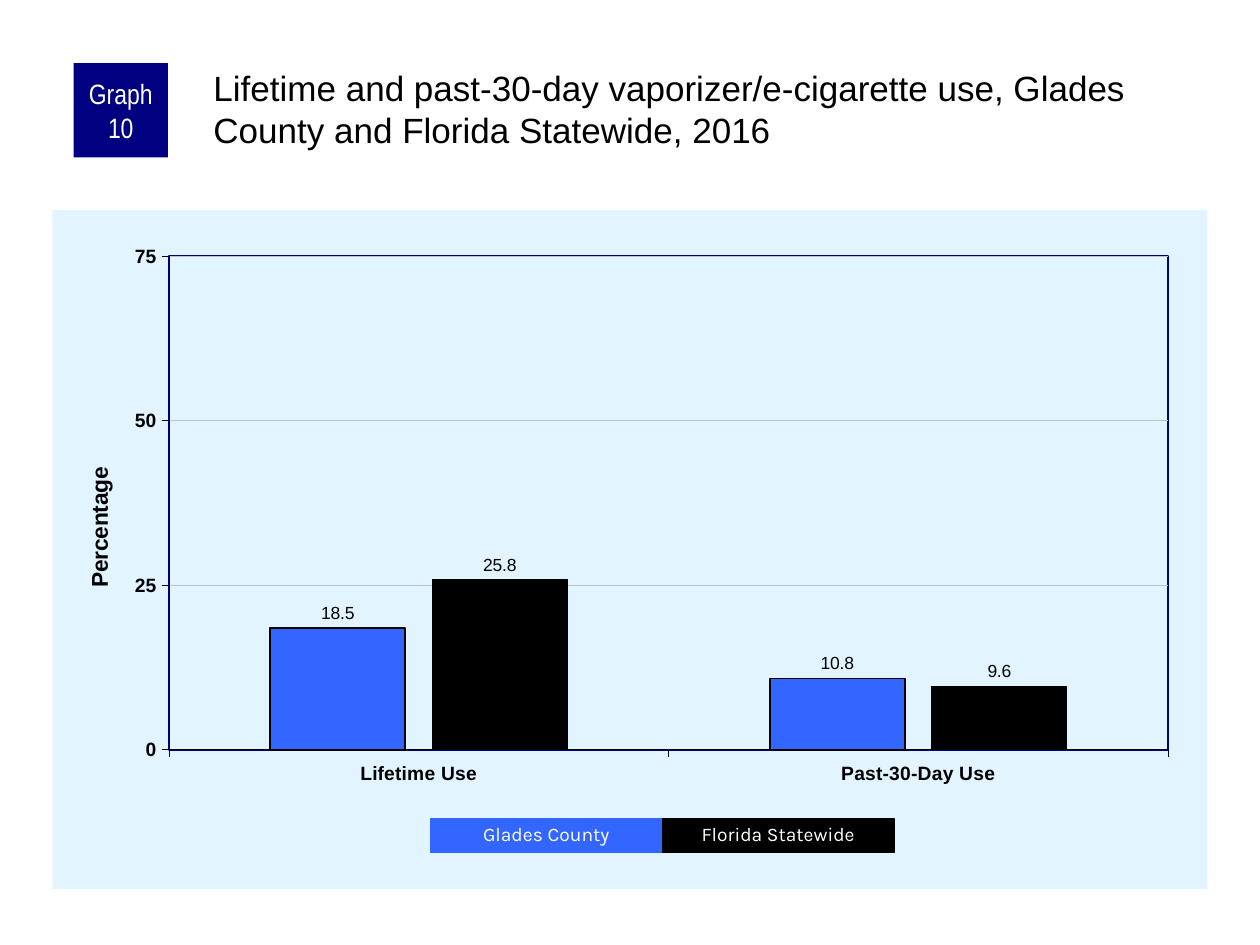
from lxml.etree import fromstring
from pptx import Presentation
from pptx.chart.data import CategoryChartData
from pptx.dml.color import RGBColor
from pptx.enum.chart import XL_CHART_TYPE, XL_LABEL_POSITION, XL_TICK_MARK
from pptx.enum.shapes import MSO_SHAPE
from pptx.enum.text import MSO_ANCHOR, MSO_AUTO_SIZE, PP_ALIGN
from pptx.oxml.ns import nsdecls
from pptx.util import Pt

COLORS = {"navy": "000080", "blue": "3366FF", "black": "000000",
          "white": "FFFFFF", "pale": "E1F4FF", "grid": "C0C0C0"}


def rgb(name):
    return RGBColor.from_string(COLORS[name])


def set_font(font, size, color="black", name="Arial", bold=False):
    font.size, font.name, font.bold = Pt(size), name, bold
    font.color.rgb = rgb(color)


def set_line(line, color, width):
    line.color.rgb = rgb(color)
    line.width = Pt(width)


def write(tf, text, align=PP_ALIGN.LEFT, anchor=MSO_ANCHOR.TOP,
          insets=(7.2, 3.6, 7.2, 3.6), spacing=None, **font):
    tf.word_wrap = True
    tf.vertical_anchor = anchor
    tf.margin_left, tf.margin_top, tf.margin_right, tf.margin_bottom = map(Pt, insets)
    p = tf.paragraphs[0]
    p.alignment, p.line_spacing = align, spacing
    r = p.add_run()
    r.text = text
    set_font(r.font, **font)


def chart_xml(xml):
    """Parse a chart fragment, declaring its namespaces on the root tag."""
    tag, rest = xml.split(">", 1)
    return fromstring(f"{tag} {nsdecls('c', 'a')}>{rest}")


def manual_layout(x, y, w=None, h=None):
    target = '<c:layoutTarget val="inner"/>' if w else ""
    size = f'<c:w val="{w}"/><c:h val="{h}"/>' if w else ""
    return chart_xml(
        f'<c:layout><c:manualLayout>{target}<c:xMode val="edge"/><c:yMode val="edge"/>'
        f'<c:x val="{x}"/><c:y val="{y}"/>{size}</c:manualLayout></c:layout>')


class Deck:
    def __init__(self, width, height):
        self.prs = Presentation()
        self.prs.slide_width, self.prs.slide_height = Pt(width), Pt(height)
        self.s = self.prs.slides.add_slide(self.prs.slide_layouts[6])

    def text(self, box, text, **fmt):
        write(self.s.shapes.add_textbox(*map(Pt, box)).text_frame, text, **fmt)

    def box(self, box, fill, text, line=None, grow=False, **fmt):
        sp = self.s.shapes.add_shape(MSO_SHAPE.RECTANGLE, *map(Pt, box))
        sp.shadow.inherit = False
        sp.fill.solid()
        sp.fill.fore_color.rgb = rgb(fill)
        if line:
            set_line(sp.line, line, 0.75)
        else:
            sp.line.fill.background()
        write(sp.text_frame, text, align=PP_ALIGN.CENTER, color="white", **fmt)
        if grow:
            sp.text_frame.auto_size = MSO_AUTO_SIZE.SHAPE_TO_FIT_TEXT

    def columns(self, box, categories, series):
        """Add a column chart; series holds (name, values, fill, line width)."""
        data = CategoryChartData(number_format="0.0")
        data.categories = categories
        for name, values, *_ in series:
            data.add_series(name, values)
        chart = self.s.shapes.add_chart(
            XL_CHART_TYPE.COLUMN_CLUSTERED, *map(Pt, box), data).chart
        chart.has_legend = chart.has_title = False
        set_font(chart.font, 11.5)
        plot = chart.plots[0]
        plot.gap_width, plot.overlap, plot.vary_by_categories = 150, -20, False
        for ser, (_, _, fill, width) in zip(plot.series, series):
            ser.format.fill.solid()
            ser.format.fill.fore_color.rgb = rgb(fill)
            set_line(ser.format.line, "black", width)
            labels = ser.data_labels
            labels.show_value = True
            labels.position = XL_LABEL_POSITION.OUTSIDE_END
            labels.number_format, labels.number_format_is_linked = "0.0", False
            set_font(labels.font, 10)
        self.axes(chart)
        self.areas(chart)

    def axes(self, chart):
        for axis in (chart.category_axis, chart.value_axis):
            axis.major_tick_mark = XL_TICK_MARK.OUTSIDE
            axis.minor_tick_mark = XL_TICK_MARK.NONE
            set_font(axis.tick_labels.font, 11, bold=True)
            set_line(axis.format.line, "black", 0.25)
        axis = chart.value_axis
        axis.minimum_scale, axis.maximum_scale, axis.major_unit = 0, 75, 25
        axis.tick_labels.number_format = "0"
        axis.tick_labels.number_format_is_linked = False
        set_line(axis.major_gridlines.format.line, "grid", 0.25)
        title = axis.axis_title
        p = title.text_frame.paragraphs[0]
        r = p.add_run()
        r.text = "Percentage"
        set_font(r.font, 13, bold=True)
        title.text_frame._txBody.bodyPr.set("rot", "-5400000")
        self.place(title._element, manual_layout(0.025, 0.373), 1)

    def areas(self, chart):
        space = chart._chartSpace
        area = space.chart.plotArea
        self.place(area, manual_layout(0.101, 0.068, 0.865, 0.727), 0)
        area.append(chart_xml(
            f'<c:spPr><a:noFill/><a:ln w="{Pt(1)}"><a:solidFill>'
            f'<a:srgbClr val="{COLORS["navy"]}"/></a:solidFill></a:ln></c:spPr>'))
        space.chart.addnext(chart_xml(
            f'<c:spPr><a:solidFill><a:srgbClr val="{COLORS["pale"]}"/></a:solidFill>'
            '<a:ln><a:noFill/></a:ln></c:spPr>'))

    def place(self, element, layout, index):
        """Replace the layout of a chart element, at its place in the schema."""
        for old in element.xpath("c:layout"):
            element.remove(old)
        element.insert(index, layout)


def main():
    deck = Deck(720, 540)
    deck.columns((30, 120, 660, 388), ("Lifetime Use", "Past-30-Day Use"),
                 [("Series 1", (18.5, 10.8), "blue", 1),
                  ("Series 2", (25.8, 9.6), "black", 0.75)])
    deck.box((42, 36, 54, 54), "navy", "Graph 10", size=16, name="Arial Narrow",
             anchor=MSO_ANCHOR.MIDDLE, insets=(3.6, 0, 3.6, 0))
    deck.text((120, 36, 570, 60),
              "Lifetime and past-30-day vaporizer/e-cigarette use, Glades County "
              "and Florida Statewide, 2016", size=20, insets=(2, 2, 0, 0))
    key_width = 132.5
    for i, (label, color) in enumerate([("Glades County", "blue"),
                                        ("Florida Statewide", "black")]):
        deck.box((246 + i * key_width, 468, key_width, 19.4), color, label,
                 line=color, grow=True, spacing=0.9, size=11, name="Karla")
    deck.prs.save("out.pptx")


if __name__ == "__main__":
    main()
